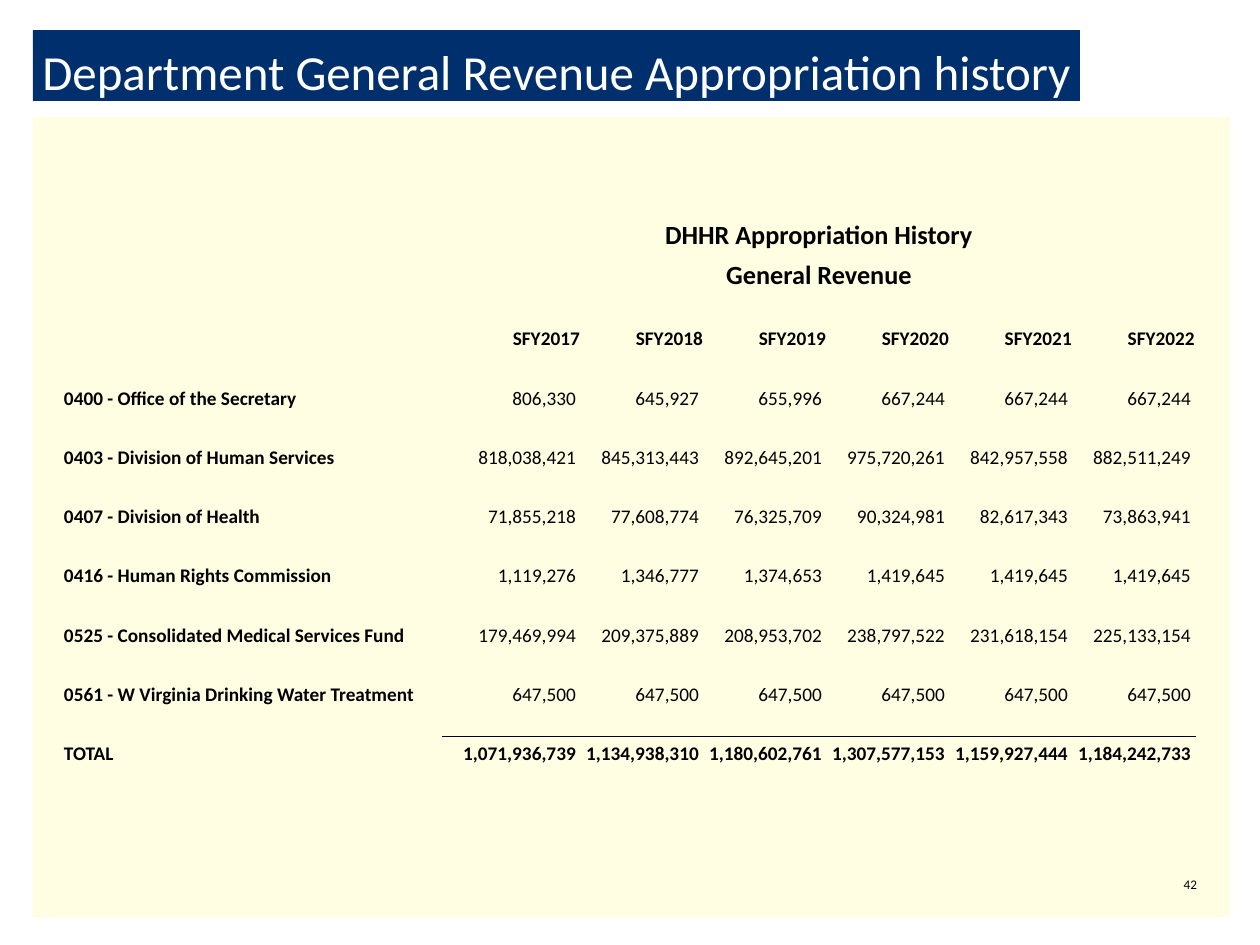
"""Builds the department general revenue appropriation history slide."""
from lxml import etree
from pptx import Presentation
from pptx import util as u
from pptx.dml import color
from pptx.enum import shapes, text
from pptx.oxml import ns

COLORS = {"navy": "002F6D", "cream": "FFFDE2", "white": "FFFFFF", "black": "000000"}
NO_GRID = "{2D5ABB26-0587-4C30-8999-92F81FD0307C}"
LEFT, CENTER, RIGHT = text.PP_ALIGN.LEFT, text.PP_ALIGN.CENTER, text.PP_ALIGN.RIGHT
HEADINGS = ["DHHR Appropriation History", "General Revenue"]
YEARS = range(2017, 2023)
FUNDS = {
    "0400 - Office of the Secretary": [806330, 645927, 655996, 667244, 667244, 667244],
    "0403 - Division of Human Services":
        [818038421, 845313443, 892645201, 975720261, 842957558, 882511249],
    "0407 - Division of Health":
        [71855218, 77608774, 76325709, 90324981, 82617343, 73863941],
    "0416 - Human Rights Commission":
        [1119276, 1346777, 1374653, 1419645, 1419645, 1419645],
    "0525 - Consolidated Medical Services Fund":
        [179469994, 209375889, 208953702, 238797522, 231618154, 225133154],
    "0561 - W Virginia Drinking Water Treatment": [647500] * 6,
    "TOTAL":
        [1071936739, 1134938310, 1180602761, 1307577153, 1159927444, 1184242733],
}


def px(length):
    return u.Emu(round(length * 914400 / 126))


class Deck:
    font = "Calibri"

    def __init__(self, width, height):
        self.presentation = Presentation()
        self.presentation.slide_width = px(width)
        self.presentation.slide_height = px(height)
        self.slide = self.presentation.slides.add_slide(self.presentation.slide_layouts[6])

    def panel(self, left, top, width, height, fill):
        panel = self.slide.shapes.add_shape(
            shapes.MSO_SHAPE.RECTANGLE, px(left), px(top), px(width), px(height))
        panel.shadow.inherit = False
        panel.fill.solid()
        panel.fill.fore_color.rgb = color.RGBColor.from_string(COLORS[fill])
        panel.line.fill.background()

    def set_text(self, frame, words, size, align, ink="black", bold=False):
        frame.text = words
        paragraph = frame.paragraphs[0]
        paragraph.alignment = align
        for run in paragraph.runs:
            run.font.name = self.font
            run.font.size = u.Pt(size)
            run.font.bold = bold
            run.font.color.rgb = color.RGBColor.from_string(COLORS[ink])

    def label(self, left, top, width, height, words, size, align, anchor, ink="black"):
        frame = self.slide.shapes.add_textbox(
            px(left), px(top), px(width), px(height)).text_frame
        frame.margin_left = frame.margin_top = frame.margin_right = frame.margin_bottom = 0
        frame.word_wrap = True
        frame.vertical_anchor = anchor
        self.set_text(frame, words, size, align, ink)

    def table(self, left, top, widths, heights):
        table = self.slide.shapes.add_table(
            len(heights), len(widths), px(left), px(top),
            px(sum(widths)), px(sum(heights))).table
        table.first_row = table.horz_banding = False
        table._tbl.tblPr.find(ns.qn("a:tableStyleId")).text = NO_GRID
        for column, width in zip(table.columns, widths):
            column.width = px(width)
        for row, height in zip(table.rows, heights):
            row.height = px(height)
        for cell in table.iter_cells():
            cell.fill.background()
            cell.margin_left = cell.margin_top = cell.margin_right = px(1)
            cell.margin_bottom = 0
            cell.vertical_anchor = text.MSO_ANCHOR.BOTTOM
            etree.SubElement(cell.text_frame.paragraphs[0]._p,
                             ns.qn("a:endParaRPr"), sz="1100")
        return table

    def cell(self, cell, words, size, align, bold=True, inset=1):
        cell.margin_right = px(inset)
        self.set_text(cell.text_frame, words, size, align, bold=bold)

    def rule(self, cell, side):
        line = etree.Element(ns.qn(f"a:ln{side}"), w=str(u.Pt(0.5)))
        fill = etree.SubElement(line, ns.qn("a:solidFill"))
        etree.SubElement(fill, ns.qn("a:srgbClr"), val=COLORS["black"])
        cell._tc.get_or_add_tcPr().insert(0, line)


def main():
    deck = Deck(1260, 945)
    deck.panel(33, 117, 1197, 800, "cream")
    deck.panel(33, 30, 1047, 71, "navy")
    deck.label(33, 32, 1047, 77, "Department General Revenue Appropriation history",
               28, CENTER, text.MSO_ANCHOR.MIDDLE, "white")
    deck.label(1149, 876, 48, 24, "42", 7.5, RIGHT, text.MSO_ANCHOR.TOP)

    line_height = (554 - 2 * 40) / 16
    history = deck.table(63, 212, [379, 139] + [123] * 5, [40] * 2 + [line_height] * 16)
    for row, heading in enumerate(HEADINGS):
        history.cell(row, 1).merge(history.cell(row, 6))
        deck.cell(history.cell(row, 1), heading, 15, CENTER)
    for column, year in enumerate(YEARS, 1):
        deck.cell(history.cell(3, column), f"SFY{year}", 11, RIGHT)
        deck.rule(history.cell(16, column), "B")
        deck.rule(history.cell(17, column), "T")
    for index, (fund, amounts) in enumerate(FUNDS.items()):
        row = 5 + 2 * index
        deck.cell(history.cell(row, 0), fund, 11, LEFT)
        for column, amount in enumerate(amounts, 1):
            deck.cell(history.cell(row, column), f"{amount:,}", 11, RIGHT,
                      bold=fund == "TOTAL", inset=5)
    deck.presentation.save("out.pptx")


if __name__ == "__main__":
    main()
